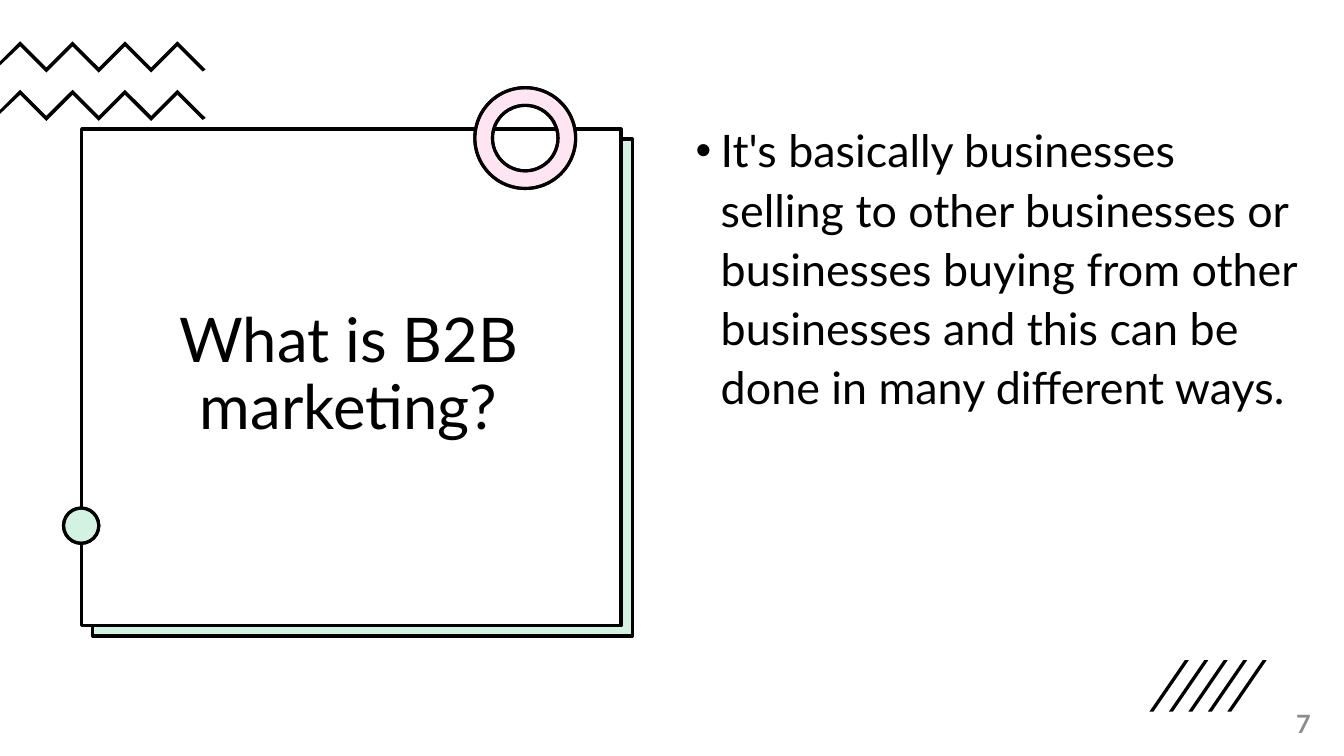
import dataclasses

import pptx
import pptx.dml.color
import pptx.enum.shapes
import pptx.enum.text
import pptx.oxml
import pptx.oxml.ns
import pptx.util
from pptx.util import Inches

TITLE = "What is B2B marketing?"
BODY = (
    "It's basically businesses selling to other businesses or businesses "
    "buying from other businesses and this can be done in many different ways."
)
PAGE_NUMBER = "7"

PAGE_SIZE = (13.33, 7.5)
CARD = (0.81, 1.28, 5.35, 4.93)
CARD_BACK = (0.92, 1.38, 5.35, 4.93)
RING = (4.71, 0.87, 1, 1)
RING_THICKNESS = 0.175
DOT = (0.63, 5.04, 0.35, 0.35)
TITLE_AREA = (1.21, 1.38, 4.5, 4.7)
BODY_AREA = (6.8, 1.12, 6.18, 4.76)
NUMBER_AREA = (10.1, 6.98, 3, 0.4)
ZIGZAG_TOPS = (0.41, 0.89)
SLASH_COUNT, SLASH_LEFT, SLASH_STEP = 5, 11.4, 0.193


@dataclasses.dataclass(frozen=True)
class Theme:
    font: str = "Lato"
    ink: str = "000000"
    paper: str = "FFFFFF"
    green: str = "21C46B"
    pink: str = "FF80BD"
    gray: str = "8C8C8C"
    tint: int = 20
    title_size: int = 44
    body_size: int = 32
    number_size: int = 18
    line_width: float = 2.25


THEME = Theme()
SHAPE = pptx.enum.shapes.MSO_SHAPE
ALIGN = pptx.enum.text.PP_ALIGN
ANCHOR = pptx.enum.text.MSO_ANCHOR


def rgb(color):
    return pptx.dml.color.RGBColor.from_string(color)


def add_child(parent, tag, **attributes):
    child = pptx.oxml.parse_xml(f"<a:{tag} {pptx.oxml.ns.nsdecls('a')}/>")
    for name, value in attributes.items():
        child.set(name, str(value))
    parent.append(child)
    return child


def paint(shape, fill, line=None, opacity=100):
    shape.shadow.inherit = False
    shape.fill.solid()
    shape.fill.fore_color.rgb = rgb(fill)
    if opacity < 100:
        color = shape.element.spPr.find(".//" + pptx.oxml.ns.qn("a:srgbClr"))
        add_child(color, "alpha", val=opacity * 1000)
    if line:
        shape.line.color.rgb = rgb(line)
        shape.line.width = pptx.util.Pt(THEME.line_width)
    else:
        shape.line.fill.background()


def add_preset(page, kind, area, fill, line=None, opacity=100):
    shape = page.shapes.add_shape(kind, *map(Inches, area))
    paint(shape, fill, line, opacity)
    return shape


def add_tinted(page, kind, area, color, base_line=THEME.ink):
    return [
        add_preset(page, kind, area, THEME.paper, base_line),
        add_preset(page, kind, area, color, THEME.ink, THEME.tint),
    ]


def add_outline(group, points):
    corners = [(Inches(x), Inches(y)) for x, y in points]
    builder = group.shapes.build_freeform(*corners[0])
    builder.add_line_segments(corners[1:], close=True)
    paint(builder.convert_to_shape(), THEME.ink)


def write(box, text, size, color=THEME.ink, align=ALIGN.LEFT, anchor=ANCHOR.TOP,
          bold=False, line_spacing=1.0, space_before=0, bullet=None, tracking=None):
    frame = box.text_frame
    frame.word_wrap = True
    frame.auto_size = pptx.enum.text.MSO_AUTO_SIZE.NONE
    frame.vertical_anchor = anchor
    para = frame.paragraphs[0]
    para.alignment = align
    para.line_spacing = line_spacing
    para.space_before = pptx.util.Pt(space_before)
    span = para.add_run()
    span.text = text
    span.font.name = THEME.font
    span.font.size = pptx.util.Pt(size)
    span.font.bold = bold
    span.font.color.rgb = rgb(color)
    if tracking:
        span.font._element.set("spc", str(tracking * 100))
    if bullet:
        properties = para._p.get_or_add_pPr()
        properties.set("marL", str(Inches(0.25)))
        properties.set("indent", str(Inches(-0.25)))
        add_child(properties, "buFont", typeface="Arial")
        add_child(properties, "buChar", char=bullet)


def add_text(page, area, text, size, **style):
    box = page.shapes.add_textbox(*map(Inches, area))
    write(box, text, size, **style)


def zigzag_points(top):
    turns = [(0.2 + 0.26 * i, top + 0.26 * (i % 2)) for i in range(7)]
    lower = [(x, y + 0.05) for x, y in reversed(turns)]
    right_end = [(2.04, top + 0.28), (2.01, top + 0.3)]
    left_end = [(0, top + 0.24), (0, top + 0.2)]
    return turns + right_end + lower + left_end


def slash_points(index):
    left = SLASH_LEFT + SLASH_STEP * index
    return [(left + 0.04, 7.06), (left, 7.06), (left + 0.35, 6.55), (left + 0.39, 6.55)]


def add_group(page, outlines):
    group = page.shapes.add_group_shape()
    for points in outlines:
        add_outline(group, points)


def add_title(page):
    title = page.shapes.title
    title.left, title.top, title.width, title.height = map(Inches, TITLE_AREA)
    write(title, TITLE, THEME.title_size, align=ALIGN.CENTER,
          anchor=ANCHOR.MIDDLE, line_spacing=0.9)
    page.shapes.element.append(title.element)


def main():
    deck = pptx.Presentation()
    deck.slide_width, deck.slide_height = map(Inches, PAGE_SIZE)
    page = deck.slides.add_slide(deck.slide_layouts[5])

    add_preset(page, SHAPE.RECTANGLE, (0, 0, *PAGE_SIZE), THEME.paper)
    add_group(page, map(zigzag_points, ZIGZAG_TOPS))
    add_tinted(page, SHAPE.RECTANGLE, CARD_BACK, THEME.green, base_line=THEME.paper)
    add_preset(page, SHAPE.RECTANGLE, CARD, THEME.paper, THEME.ink)
    add_title(page)
    for ring in add_tinted(page, SHAPE.DONUT, RING, THEME.pink):
        ring.adjustments[0] = RING_THICKNESS
    add_tinted(page, SHAPE.OVAL, DOT, THEME.green)
    add_text(page, BODY_AREA, BODY, THEME.body_size, line_spacing=1.1,
             space_before=10, bullet="•")
    add_group(page, map(slash_points, range(SLASH_COUNT)))
    add_text(page, NUMBER_AREA, PAGE_NUMBER, THEME.number_size, color=THEME.gray,
             align=ALIGN.RIGHT, anchor=ANCHOR.MIDDLE, bold=True, tracking=1)

    deck.save("out.pptx")


if __name__ == "__main__":
    main()
